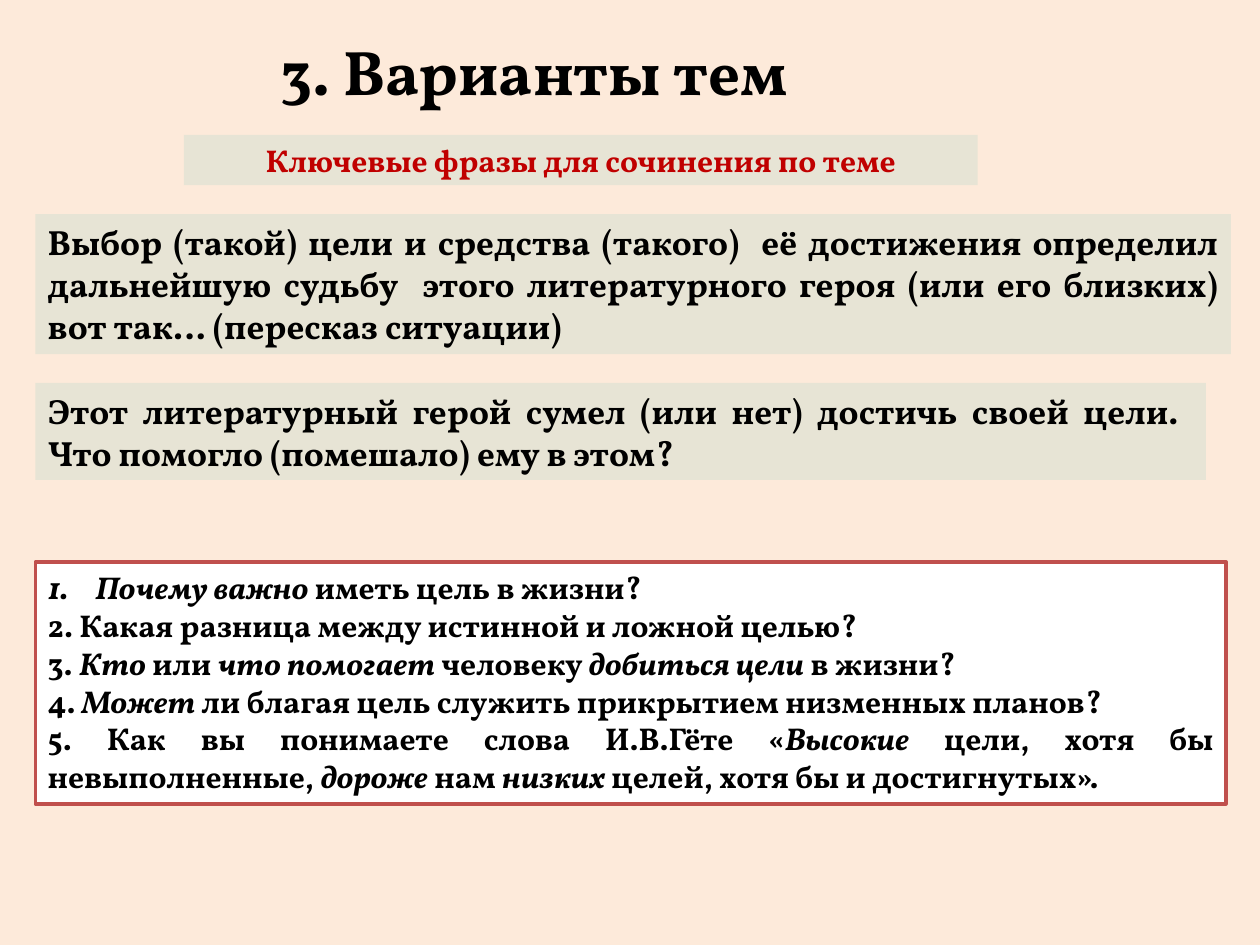
import pptx
import pptx.util
import pptx.dml.color
import pptx.enum.shapes
import pptx.enum.text
import lxml.etree

RGB = pptx.dml.color.RGBColor.from_string
ALIGN = pptx.enum.text.PP_ALIGN
THEME = {
    "font": "Vollkorn",
    "back": "FDEADA", "panel": "E7E4D5", "paper": "FFFFFF",
    "edge": "C0504D", "ink": "000000", "accent": "C00000",
    "title": 36, "body": 20, "small": 18,
}

deck = pptx.Presentation()
deck.slide_width = pptx.util.Inches(10)
deck.slide_height = pptx.util.Inches(7.5)
col, row = deck.slide_width / 100, deck.slide_height / 100
slide = deck.slides.add_slide(deck.slide_layouts[5])
slide.background.fill.solid()
slide.background.fill.fore_color.rgb = RGB(THEME["back"])


def place(shape, left, top, width, height):
    """Set a shape's box in hundredths of the slide."""
    shape.left, shape.top = round(left * col), round(top * row)
    shape.width, shape.height = round(width * col), round(height * row)


def write(shape, text, size, color, align):
    """Fill a shape with bold text; parts between asterisks are italic."""
    frame = shape.text_frame
    frame.text = text.replace("*", "")
    frame.word_wrap = True
    frame.auto_size = pptx.enum.text.MSO_AUTO_SIZE.SHAPE_TO_FIT_TEXT
    frame.vertical_anchor = pptx.enum.text.MSO_ANCHOR.TOP
    for para, line in zip(frame.paragraphs, text.split("\n")):
        para.alignment = align
        para.text = ""
        for turn, part in enumerate(line.split("*")):
            if part:
                run = para.add_run()
                run.text = part
                run.font.name = THEME["font"]
                run.font.size = pptx.util.Pt(THEME[size])
                run.font.bold = True
                run.font.italic = turn % 2 == 1
                run.font.color.rgb = RGB(THEME[color])


title = slide.shapes.title
place(title, 13, 2.8, 59.8, 9.47)
write(title, "3. Варианты тем ", "title", "ink", ALIGN.CENTER)

topics = "\n".join([
    "*Почему важно* иметь цель в жизни?",
    "2. Какая разница между истинной и ложной целью?",
    "3. *Кто* или *что помогает* человеку *добиться цели* в жизни?",
    "4. *Может* ли благая цель служить прикрытием низменных планов?",
    "5. Как вы понимаете слова И.В.Гёте «*Высокие *цели, хотя бы "
    "невыполненные, *дороже* нам *низких *целей, хотя бы и достигнутых».",
])
choice = ("Выбор (такой) цели и средства (такого)  её достижения определил "
          "дальнейшую судьбу  этого литературного героя (или его близких) "
          "вот так… (пересказ ситуации)")
result = ("Этот литературный герой сумел (или нет) достичь своей цели.  "
          "Что помогло (помешало) ему в этом?")

edge = 2.8
panels = [
    ((14.6, 14.27, 63, 5.33), "Ключевые фразы для сочинения по теме",
     "small", "accent", ALIGN.CENTER, "panel"),
    ((edge, 40.53, 92.9, 10.27), result, "body", "ink", ALIGN.JUSTIFY, "panel"),
    ((edge, 22.67, 94.9, 14.8), choice, "body", "ink", ALIGN.JUSTIFY, "panel"),
    ((edge, 59.47, 94.5, 25.6), topics, "small", "ink", ALIGN.JUSTIFY, "paper"),
]
for box, text, size, color, align, fill in panels:
    panel = slide.shapes.add_shape(
        pptx.enum.shapes.MSO_SHAPE.RECTANGLE, 0, 0, 0, 0)
    place(panel, *box)
    panel.shadow.inherit = False
    panel.fill.solid()
    panel.fill.fore_color.rgb = RGB(THEME[fill])
    panel.line.fill.background()
    write(panel, text, size, color, align)

# The last panel is the framed list of topics
panel.line.color.rgb = RGB(THEME["edge"])
panel.line.width = pptx.util.Pt(2)
paras = panel.text_frame.paragraphs
indent = pptx.util.Inches(0.38)
for para in paras[:2]:
    props = para._p.get_or_add_pPr()
    props.set("marL", str(indent))
    props.set("indent", str(-indent))
number = lxml.etree.SubElement(
    paras[0]._p.get_or_add_pPr(), pptx.oxml.ns.qn("a:buAutoNum"))
number.set("type", "arabicPeriod")

deck.save("out.pptx")
